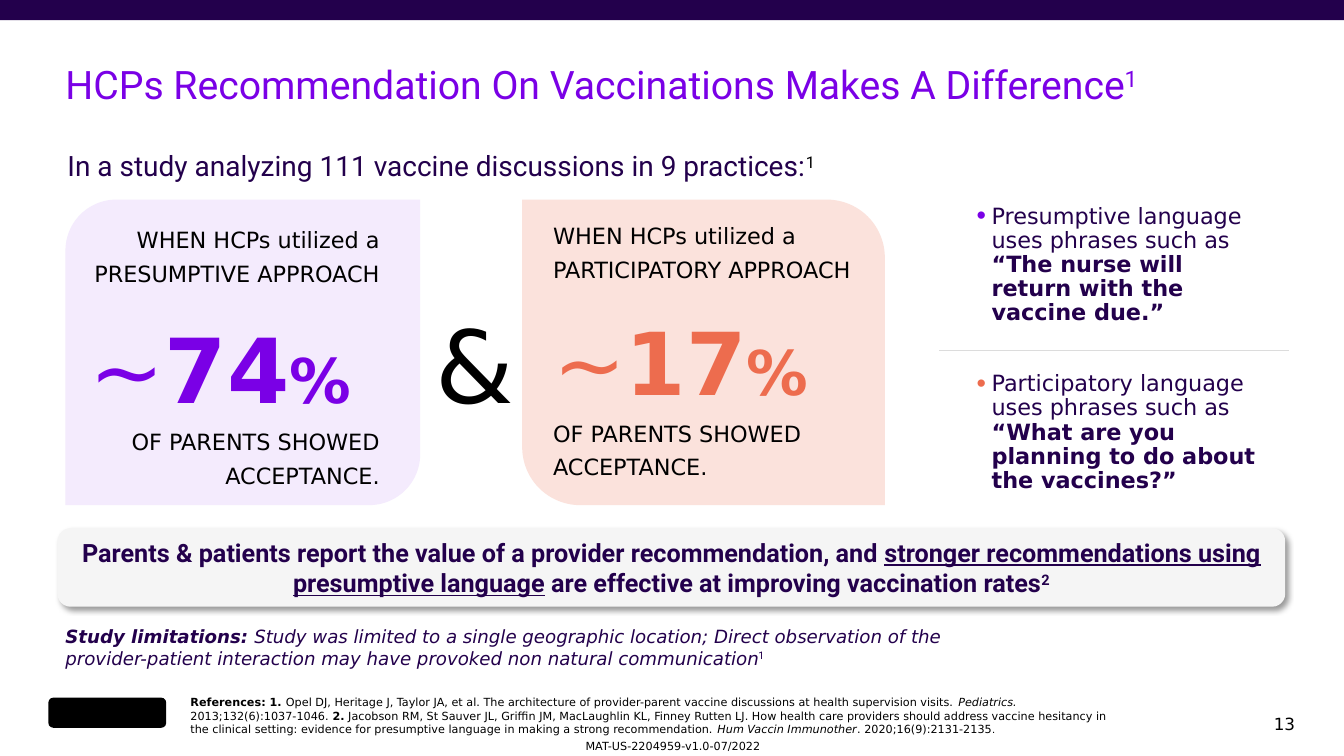
from dataclasses import dataclass

from lxml.etree import SubElement
from pptx import Presentation
from pptx.dml.color import RGBColor
from pptx.enum.shapes import MSO_CONNECTOR, MSO_SHAPE
from pptx.enum.text import MSO_ANCHOR, PP_ALIGN
from pptx.oxml.ns import qn
from pptx.util import Cm, Pt


@dataclass(frozen=True)
class Theme:
    """Colours, fonts and type sizes of the slide."""
    ink: str = "000000"
    navy: str = "23004C"
    violet: str = "7A00E6"
    coral: str = "ED6C4E"
    lilac: str = "F4EBFD"
    blush: str = "FBE2DC"
    mist: str = "F5F5F5"
    rule: str = "DCDCDC"
    head: str = "Roboto"
    body: str = "DejaVu Sans"
    alt: str = "Arial"
    title: int = 28
    intro: int = 20
    banner: int = 18
    text: int = 16
    limits: int = 13
    page: int = 12
    small: int = 8
    percent: int = 44
    ampersand: int = 72


T = Theme()


def add_run(p, text, size, color=T.ink, font=T.body, bold=False,
            italic=False, underline=False, sup=False):
    """Add one formatted run to a paragraph."""
    r = p.add_run()
    r.text = text
    f = r.font
    f.size, f.name = Pt(size), font
    f.bold, f.italic, f.underline = bold, italic, underline
    f.color.rgb = RGBColor.from_string(color)
    if sup:
        f._element.set("baseline", "30000")


def set_frame(tf, inset=(0, 0), anchor=MSO_ANCHOR.TOP):
    """Set wrapping, insets and anchor of a text frame."""
    tf.word_wrap = True
    tf.margin_left = tf.margin_right = Cm(inset[0])
    tf.margin_top = tf.margin_bottom = Cm(inset[1])
    tf.vertical_anchor = anchor


def add_text(s, box, paragraphs, align=PP_ALIGN.LEFT, spacing=1.0, **frame):
    """Add a text box of paragraphs, each a list of (text, size, options)."""
    tf = s.shapes.add_textbox(*map(Cm, box)).text_frame
    set_frame(tf, **frame)
    for i, runs in enumerate(paragraphs):
        p = tf.add_paragraph() if i else tf.paragraphs[0]
        p.alignment, p.line_spacing = align, spacing
        for text, size, options in runs:
            add_run(p, text, size, **options)
    return tf


def add_panel(s, kind, box, fill, adjustments=()):
    """Add a filled preset shape without outline or shadow."""
    sp = s.shapes.add_shape(kind, *map(Cm, box))
    sp.shadow.inherit = False
    sp.fill.solid()
    sp.fill.fore_color.rgb = RGBColor.from_string(fill)
    sp.line.fill.background()
    for i, value in enumerate(adjustments):
        sp.adjustments[i] = value
    return sp


def add_rule(s, x1, x2, y):
    """Add a thin horizontal line."""
    line = s.shapes.add_connector(MSO_CONNECTOR.STRAIGHT, Cm(x1), Cm(y), Cm(x2), Cm(y))
    line.line.color.rgb = RGBColor.from_string(T.rule)
    line.line.width = Pt(0.5)
    SubElement(line._element.spPr, qn("a:effectLst"))


def add_drop_shadow(sp):
    """Give a shape a soft shadow to the lower right."""
    effects = sp._element.spPr.find(qn("a:effectLst"))
    shadow = SubElement(effects, qn("a:outerShdw"), blurRad=str(Pt(4)),
                        dist=str(Pt(3)), dir="2700000", algn="tl", rotWithShape="0")
    color = SubElement(shadow, qn("a:srgbClr"), val=T.ink)
    SubElement(color, qn("a:alpha"), val="40000")


def add_bullet(p, color):
    """Give a paragraph a coloured bullet with a hanging indent."""
    pPr = p._p.get_or_add_pPr()
    pPr.set("marL", str(Cm(0.76)))
    pPr.set("indent", str(Cm(-0.38)))
    SubElement(SubElement(pPr, qn("a:buClr")), qn("a:srgbClr"), val=color)
    SubElement(pPr, qn("a:buSzPct"), val="120000")
    SubElement(pPr, qn("a:buFont"), typeface=T.alt)
    SubElement(pPr, qn("a:buChar"), char="•")


def add_result(s, box, approach, number, size, color, align, gap_size):
    """Add the acceptance figure for one approach."""
    strong = dict(color=color, bold=True)
    add_text(s, box, [
        [(f"WHEN HCPs utilized a {approach} APPROACH", T.text, {})],
        [("~", size, dict(color=color)), (number, size, strong),
         ("%", T.percent, strong), (" ", gap_size, {})],
        [("OF PARENTS SHOWED ACCEPTANCE.", T.text, {})],
    ], align, 1.25)


def add_phrases(s, box, phrases):
    """Add the bulleted example phrases."""
    navy = dict(color=T.navy)
    tf = add_text(s, box, [
        [(f"{kind} language uses phrases such as ", T.text, navy),
         (quote, T.text, dict(navy, bold=True))]
        for kind, quote, _ in phrases
    ], spacing=0.9, inset=(0.25, 0.13))
    for i, (p, phrase) in enumerate(zip(tf.paragraphs, phrases)):
        add_bullet(p, phrase[2])
        p.space_before = Pt(33.5 if i else 0)


def add_banner(s, box):
    """Add the rounded key message with its shadow."""
    sp = add_panel(s, MSO_SHAPE.ROUNDED_RECTANGLE, box, T.mist)
    add_drop_shadow(sp)
    set_frame(sp.text_frame, (0.25, 0.13), MSO_ANCHOR.MIDDLE)
    p = sp.text_frame.paragraphs[0]
    p.alignment = PP_ALIGN.CENTER
    for text, options in [
        ("Parents & patients report the value of a provider recommendation, and ", {}),
        ("stronger recommendations using presumptive language", dict(underline=True)),
        (" are effective at improving vaccination rates", {}),
        ("2", dict(sup=True)),
    ]:
        add_run(p, text, T.banner, T.navy, T.head, bold=True, **options)


def add_footer(s):
    """Add the limitations, references, document code and page number."""
    note = dict(color=T.navy, italic=True)
    add_text(s, (1.4, 15.62, 23.67, 1.37), [[
        ("Study limitations: ", T.limits, dict(note, bold=True)),
        ("Study was limited to a single geographic location; Direct observation of the "
         "provider-patient interaction may have provoked non natural communication",
         T.limits, note),
        ("1", T.limits, dict(color=T.navy, font=T.head, sup=True)),
    ]], inset=(0.25, 0.13))
    bold, italic = dict(bold=True), dict(italic=True)
    add_text(s, (4.8, 17.37, 23.39, 1.3), [[
        ("References: 1. ", T.small, bold),
        ("Opel DJ, Heritage J, Taylor JA, et al. The architecture of provider-parent vaccine "
         "discussions at health supervision visits. ", T.small, {}),
        ("Pediatrics.", T.small, italic),
        (" 2013;132(6):1037-1046. ", T.small, {}),
        ("2.", T.small, bold),
        (" Jacobson RM, St Sauver JL, Griffin JM, MacLaughlin KL, Finney Rutten LJ. How health "
         "care providers should address vaccine hesitancy in the clinical setting: evidence for "
         "presumptive language in making a strong recommendation. ", T.small, {}),
        ("Hum Vaccin Immunother", T.small, italic),
        (". 2020;16(9):2131-2135", T.small, {}),
        (".", T.small, dict(font=T.alt)),
    ]], inset=(0, 0.13), anchor=MSO_ANCHOR.BOTTOM)
    add_text(s, (8, 18.57, 17.93, 0.48), [[("MAT-US-2204959-v1.0-07/2022", T.small, {})]],
             PP_ALIGN.CENTER, anchor=MSO_ANCHOR.MIDDLE)
    add_text(s, (30.89, 17.86, 1.75, 0.76), [[("13", T.page, {})]],
             PP_ALIGN.RIGHT, anchor=MSO_ANCHOR.MIDDLE)
    add_panel(s, MSO_SHAPE.ROUNDED_RECTANGLE, (1.22, 17.58, 2.97, 0.76), T.ink)


def main():
    """Build the slide and save it."""
    prs = Presentation()
    prs.slide_width, prs.slide_height = Cm(33.87), Cm(19.05)
    s = prs.slides.add_slide(prs.slide_layouts[6])

    add_panel(s, MSO_SHAPE.RECTANGLE, (0, 0, 33.87, 0.51), T.navy)
    title = dict(color=T.violet, font=T.head)
    add_text(s, (1.65, 1.65, 28.52, 1.83), [[
        ("HCPs Recommendation On Vaccinations Makes A Difference", T.title, title),
        ("1", T.title, dict(title, sup=True)),
    ]], spacing=0.9)
    add_text(s, (1.45, 3.4, 30.94, 2.41), [[
        ("In a study analyzing 111 vaccine discussions in 9 practices:", T.intro,
         dict(color=T.navy, font=T.head)),
        ("1", T.intro, dict(font=T.head, sup=True)),
    ]], spacing=1.25, inset=(0.25, 0.13))

    diagonal = MSO_SHAPE.ROUND_2_DIAG_RECTANGLE
    add_panel(s, diagonal, (13.16, 5.03, 9.14, 7.7), T.blush, (0, 0.19))
    add_panel(s, diagonal, (1.65, 5.03, 8.94, 7.7), T.lilac)
    add_result(s, (0.43, 5.54, 9.14, 7.7), "PRESUMPTIVE", "74", 64, T.violet,
               PP_ALIGN.RIGHT, 64)
    add_result(s, (13.94, 5.44, 9.14, 6.91), "PARTICIPATORY", "17", 62, T.coral,
               PP_ALIGN.LEFT, T.text)
    add_text(s, (10.67, 6.86, 2.57, 3.23), [[("&", T.ampersand, {})]],
             PP_ALIGN.CENTER, 1.25)

    add_phrases(s, (23.98, 5.03, 8.26, 8.84), [
        ("Presumptive", "“The nurse will return with the vaccine due.”", T.violet),
        ("Participatory", "“What are you planning to do about the vaccines?”", T.coral),
    ])
    add_rule(s, 23.67, 32.49, 8.84)
    add_banner(s, (1.45, 13.31, 30.94, 1.98))
    add_footer(s)
    prs.save("out.pptx")


if __name__ == "__main__":
    main()
